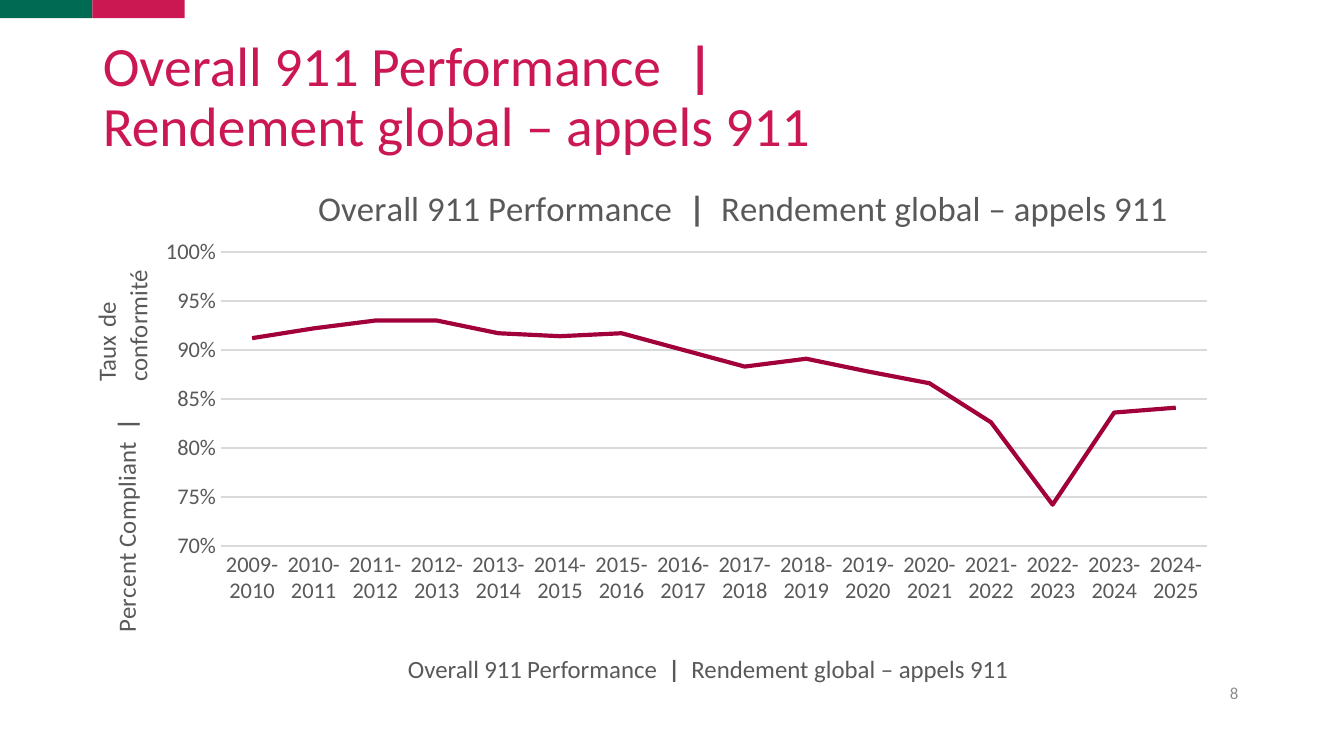
from typing import NamedTuple, Optional

import pptx
import pptx.chart.data
import pptx.dml.color
import pptx.enum.chart
import pptx.enum.shapes
import pptx.enum.text
import pptx.oxml
import pptx.oxml.ns
import pptx.util
from pptx.enum.text import MSO_ANCHOR, PP_ALIGN

PX = 9525  # EMU, 96 px to the inch
FONT = "Calibri"
GREEN = pptx.dml.color.RGBColor(0x00, 0x6A, 0x53)
PINK = pptx.dml.color.RGBColor(0xCC, 0x18, 0x52)
CRIMSON = pptx.dml.color.RGBColor(0xA2, 0x00, 0x3A)
WHITE = pptx.dml.color.RGBColor(0xFF, 0xFF, 0xFF)
DARK_GRAY = pptx.dml.color.RGBColor(0x59, 0x59, 0x59)
MID_GRAY = pptx.dml.color.RGBColor(0x8C, 0x8C, 0x8C)
LIGHT_GRAY = pptx.dml.color.RGBColor(0xD9, 0xD9, 0xD9)

FIRST_YEAR = 2009
COMPLIANCE = (0.912, 0.922, 0.93, 0.93, 0.917, 0.914, 0.917, 0.9,
              0.883, 0.891, 0.878, 0.866, 0.826, 0.742, 0.836, 0.841)


class Box(NamedTuple):
    left: int
    top: int
    width: int
    height: int

    def emu(self) -> list[int]:
        return [length * PX for length in self]


class Run(NamedTuple):
    text: str
    bold: Optional[bool] = None
    size: Optional[float] = None


class Label(NamedTuple):
    box: Box
    runs: tuple[Run, ...]
    size: float
    color: pptx.dml.color.RGBColor
    anchor: MSO_ANCHOR = MSO_ANCHOR.TOP
    align: PP_ALIGN = PP_ALIGN.LEFT
    line_spacing: Optional[float] = None
    fill: Optional[pptx.dml.color.RGBColor] = None
    upward: bool = False


class Bar(NamedTuple):
    box: Box
    color: pptx.dml.color.RGBColor


BARS = (Bar(Box(0, 0, 66, 13), GREEN), Bar(Box(66, 0, 66, 13), PINK))
CHART_BOX = Box(67, 104, 828, 362)

TITLE = Label(
    Box(64, 18, 828, 105),
    (Run("Overall 911 Performance  "), Run("|\v", bold=True),
     Run("Rendement global – appels 911")),
    29.7, PINK, MSO_ANCHOR.MIDDLE, line_spacing=0.9)
PAGE_NUMBER = Label(Box(678, 480, 216, 29), (Run("8"),), 9, MID_GRAY,
                    MSO_ANCHOR.MIDDLE, PP_ALIGN.RIGHT)
FRENCH_AXIS_TITLE = Label(
    Box(54, 129, 48, 153),
    (Run("Taux"), Run(" ", size=18), Run("de"), Run(" ", size=18),
     Run("conformité")),
    13.3, DARK_GRAY, upward=True)
CAPTION = Label(
    Box(282, 462, 471, 53),
    (Run("Overall"), Run(" ", size=12), Run("911"), Run(" ", size=12),
     Run("Performance  "), Run("|  ", bold=True),
     Run("Rendement global – appels 911")),
    13.3, DARK_GRAY, fill=WHITE)


def style_font(font, size: float, color: pptx.dml.color.RGBColor) -> None:
    font.name = FONT
    font.size = pptx.util.Pt(size)
    font.bold = False
    font.color.rgb = color


def add_runs(paragraph, runs: tuple[Run, ...]) -> None:
    for part in runs:
        run = paragraph.add_run()
        run.text = part.text.rstrip("\v")
        if part.bold is not None:
            run.font.bold = part.bold
        if part.size is not None:
            run.font.size = pptx.util.Pt(part.size)
        if part.text.endswith("\v"):
            paragraph.add_line_break()


def draw_bar(slide, bar: Bar) -> None:
    shape = slide.shapes.add_shape(
        pptx.enum.shapes.MSO_SHAPE.RECTANGLE, *bar.box.emu())
    shape.shadow.inherit = False
    shape.fill.solid()
    shape.fill.fore_color.rgb = bar.color
    shape.line.fill.background()


def draw_label(slide, label: Label) -> None:
    text_box = slide.shapes.add_textbox(*label.box.emu())
    if label.fill is not None:
        text_box.fill.solid()
        text_box.fill.fore_color.rgb = label.fill
    frame = text_box.text_frame
    frame.word_wrap = True
    frame.vertical_anchor = label.anchor
    if label.upward:
        frame._txBody.bodyPr.set("vert", "vert270")
    paragraph = frame.paragraphs[0]
    paragraph.alignment = label.align
    if label.line_spacing is not None:
        paragraph.line_spacing = label.line_spacing
    style_font(paragraph.font, label.size, label.color)
    add_runs(paragraph, label.runs)


def place(element, x: float, y: float,
          size: Optional[tuple[float, float]] = None) -> None:
    """Give a chart part a manual layout, in fractions of the chart."""
    qn = pptx.oxml.ns.qn
    for old in element.findall(qn("c:layout")):
        element.remove(old)
    settings = [("xMode", "edge"), ("yMode", "edge"), ("x", x), ("y", y)]
    if size is not None:
        settings.insert(0, ("layoutTarget", "inner"))
        settings += [("w", size[0]), ("h", size[1])]
    children = "".join(f'<c:{tag} val="{value}"/>' for tag, value in settings)
    layout = pptx.oxml.parse_xml(
        f'<c:layout {pptx.oxml.ns.nsdecls("c")}>'
        f"<c:manualLayout>{children}</c:manualLayout></c:layout>")
    element.insert(0 if element.find(qn("c:tx")) is None else 1, layout)


def write_chart_title(title, runs: tuple[Run, ...], size: float,
                      x: float, y: float) -> None:
    paragraph = title.text_frame.paragraphs[0]
    style_font(paragraph.font, size, DARK_GRAY)
    add_runs(paragraph, runs)
    place(title._element, x, y)


def draw_chart(slide) -> None:
    data = pptx.chart.data.CategoryChartData(number_format="0%")
    data.categories = [f"{year}-{year + 1}" for year in
                       range(FIRST_YEAR, FIRST_YEAR + len(COMPLIANCE))]
    data.add_series("Series 1", COMPLIANCE)
    chart = slide.shapes.add_chart(
        pptx.enum.chart.XL_CHART_TYPE.LINE, *CHART_BOX.emu(), data).chart
    style_font(chart.font, 12, DARK_GRAY)
    chart.has_legend = False
    chart.plots[0].vary_by_categories = False

    line = chart.plots[0].series[0]
    line.smooth = False
    line.format.line.color.rgb = CRIMSON
    line.format.line.width = pptx.util.Pt(2.25)

    years, percent = chart.category_axis, chart.value_axis
    for axis in (years, percent):
        axis.major_tick_mark = pptx.enum.chart.XL_TICK_MARK.NONE
        axis.minor_tick_mark = pptx.enum.chart.XL_TICK_MARK.NONE
        style_font(axis.tick_labels.font, 12, DARK_GRAY)
    percent.minimum_scale, percent.maximum_scale = 0.7, 1
    percent.major_unit = 0.05
    percent.tick_labels.number_format = "0%"
    percent.tick_labels.number_format_is_linked = False
    percent.format.line.fill.background()
    percent.has_major_gridlines = True
    for rule in (years.format.line, percent.major_gridlines.format.line):
        rule.color.rgb = LIGHT_GRAY
        rule.width = pptx.util.Pt(0.75)

    chart.has_title = True
    write_chart_title(
        chart.chart_title,
        (Run("Overall 911 Performance  "), Run("|", bold=True),
         Run("  Rendement global – appels 911")), 18.6, 0.19, 0.07)
    write_chart_title(
        percent.axis_title,
        (Run("Percent Compliant  "), Run("| ", bold=True)), 13.3, 0.01, 0.52)
    place(chart._chartSpace.chart.plotArea, 0.11, 0.21, (0.85, 0.58))


def main() -> None:
    presentation = pptx.Presentation()
    presentation.slide_width = 960 * PX
    presentation.slide_height = 540 * PX
    slide = presentation.slides.add_slide(presentation.slide_layouts[6])
    for bar in BARS:
        draw_bar(slide, bar)
    draw_label(slide, TITLE)
    draw_label(slide, PAGE_NUMBER)
    draw_chart(slide)
    draw_label(slide, FRENCH_AXIS_TITLE)
    draw_label(slide, CAPTION)
    presentation.save("out.pptx")


if __name__ == "__main__":
    main()
